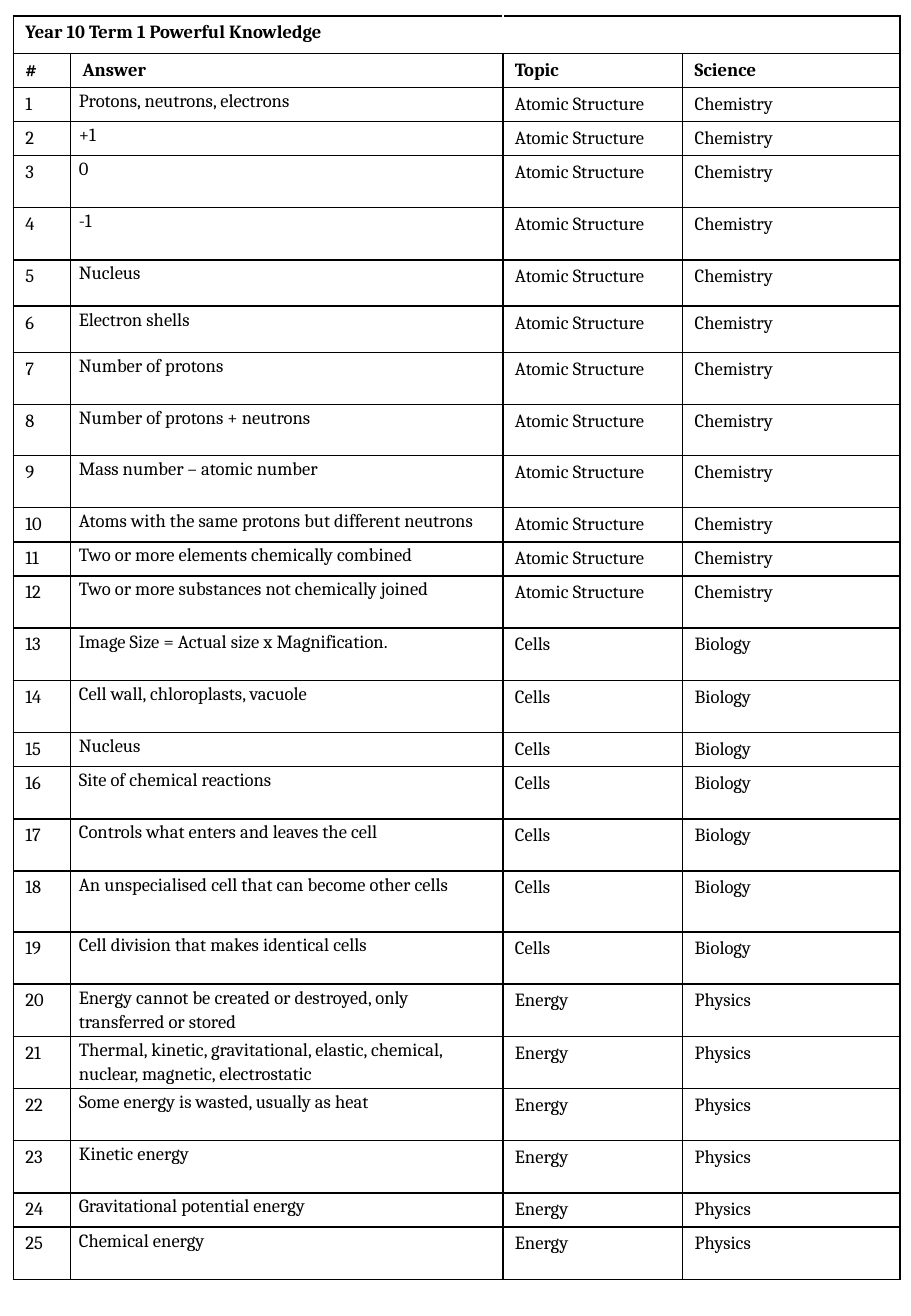
from lxml import etree
from pptx import Presentation
from pptx.dml.color import RGBColor
from pptx.oxml import ns
from pptx.util import Inches, Pt

BLACK, WHITE = "000000", "FFFFFF"
TALL, MEDIUM, SHORT = 0.43, 0.38, 0.28
COLUMN_WIDTHS = [0.47, 3.56, 1.48, 1.79]
HEADINGS = ["#", "Answer", "Topic", "Science"]

# Each section: topic, science, then (answer, row height)
SECTIONS = [
    ("Atomic Structure", "Chemistry", [
        ("Protons, neutrons, electrons", SHORT),
        ("+1", SHORT),
        ("0", TALL),
        ("-1", TALL),
        ("Nucleus", MEDIUM),
        ("Electron shells", MEDIUM),
        ("Number of protons", TALL),
        ("Number of protons + neutrons", 0.42),
        ("Mass number – atomic number", TALL),
        ("Atoms with the same protons but different neutrons", SHORT),
        ("Two or more elements chemically combined", SHORT),
        ("Two or more substances not chemically joined", TALL),
    ]),
    ("Cells", "Biology", [
        ("Image Size = Actual size x Magnification.", TALL),
        ("Cell wall, chloroplasts, vacuole", TALL),
        ("Nucleus", SHORT),
        ("Site of chemical reactions", TALL),
        ("Controls what enters and leaves the cell", TALL),
        ("An unspecialised cell that can become other cells", 0.5),
        ("Cell division that makes identical cells", TALL),
    ]),
    ("Energy", "Physics", [
        ("Energy cannot be created or destroyed, only transferred or stored", TALL),
        ("Thermal, kinetic, gravitational, elastic, chemical, "
         "nuclear, magnetic, electrostatic", TALL),
        ("Some energy is wasted, usually as heat", TALL),
        ("Kinetic energy", TALL),
        ("Gravitational potential energy", SHORT),
        ("Chemical energy", TALL),
    ]),
]


def add_borders(cell, colors):
    """Draw 1 pt borders; colors maps the sides L, R, T, B to hex strings."""
    properties = cell._tc.get_or_add_tcPr()
    for side, color in colors.items():
        line = etree.SubElement(properties, ns.qn(f"a:ln{side}"), w=str(Pt(1)))
        fill = etree.SubElement(line, ns.qn("a:solidFill"))
        etree.SubElement(fill, ns.qn("a:srgbClr"), val=color)


def write_cell(cell, words, bold):
    para = cell.text_frame.paragraphs[0]
    if words:
        span = para.add_run()
        span.text = words
        for name, value in {"name": "Cambria", "size": Pt(11), "bold": bold}.items():
            setattr(span.font, name, value)
        span.font.color.rgb = RGBColor.from_string(BLACK)
    else:
        etree.SubElement(para._p, ns.qn("a:endParaRPr"), sz="1100")
    return para


rows = [["Year 10 Term 1 Powerful Knowledge", "", "", ""], HEADINGS]
heights = [0.31, SHORT]
for topic, science, answers in SECTIONS:
    for answer, height in answers:
        rows.append([str(len(rows) - 1), answer, topic, science])
        heights.append(height)

deck = Presentation()
deck.slide_width, deck.slide_height = Inches(7.5), Inches(10.83)
page = deck.slides.add_slide(deck.slide_layouts[6])
table = page.shapes.add_table(
    len(rows), len(COLUMN_WIDTHS), Inches(0.11), Inches(0.13),
    Inches(sum(COLUMN_WIDTHS)), Inches(sum(heights))).table
table.first_row = table.horz_banding = False
for column, width in zip(table.columns, COLUMN_WIDTHS):
    column.width = Inches(width)

for row_index, (words, height) in enumerate(zip(rows, heights)):
    table.rows[row_index].height = Inches(height)
    for column_index, text in enumerate(words):
        cell = table.cell(row_index, column_index)
        para = write_cell(cell, text, bold=row_index < 2)
        borders = dict.fromkeys("LRTB", BLACK)
        if row_index == 0:
            # The two halves of the title row meet at a white line
            borders["R" if column_index < 2 else "L"] = WHITE
        elif row_index > 1 and column_index == 1:
            cell.margin_left = cell.margin_right = Inches(0.07)
            cell.margin_top = cell.margin_bottom = 0
            para.line_spacing = 1.15
            para.space_after = Pt(10)
        add_borders(cell, borders)
        cell.fill.background()

for first in (0, 2):
    table.cell(0, first).merge(table.cell(0, first + 1))

deck.save("out.pptx")
